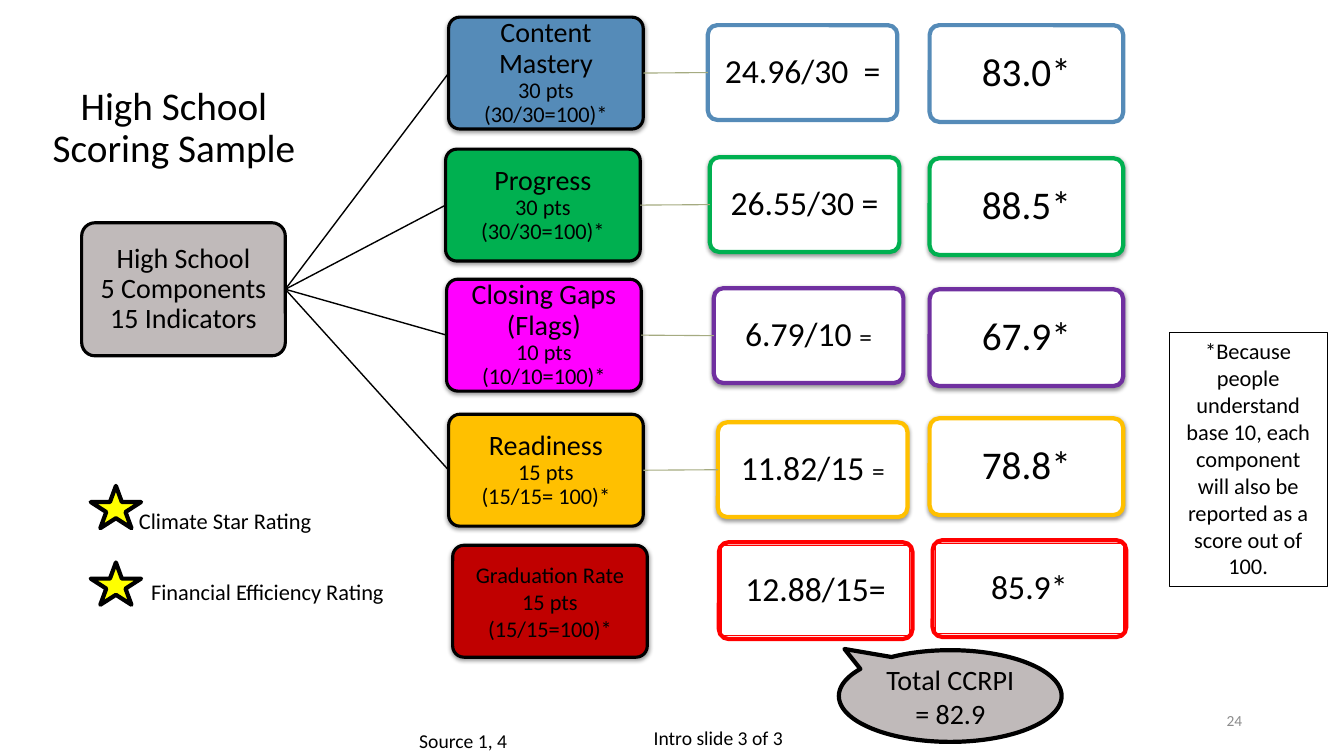
from lxml import etree
from pptx import Presentation
from pptx import util as u
from pptx.dml.color import RGBColor
from pptx.enum import shapes, text
from pptx.oxml import ns

BLACK = RGBColor(0x00, 0x00, 0x00)
WHITE = RGBColor(0xFF, 0xFF, 0xFF)
GRAY = RGBColor(0xC0, 0xBA, 0xBA)
NUMBER_GRAY = RGBColor(0x8C, 0x8C, 0x8C)
LINK = RGBColor(0xA5, 0xAB, 0x81)
BLUE = RGBColor(0x55, 0x8B, 0xB8)
GREEN = RGBColor(0x00, 0xB0, 0x50)
MAGENTA = RGBColor(0xFF, 0x00, 0xFF)
PURPLE = RGBColor(0x70, 0x30, 0xA0)
AMBER = RGBColor(0xFF, 0xC0, 0x00)
DARK_RED = RGBColor(0xC0, 0x00, 0x00)
RED = RGBColor(0xFF, 0x00, 0x00)
YELLOW = RGBColor(0xFF, 0xFF, 0x00)

CENTER, LEFT, RIGHT = text.PP_ALIGN.CENTER, text.PP_ALIGN.LEFT, text.PP_ALIGN.RIGHT
MIDDLE, TOP = text.MSO_ANCHOR.MIDDLE, text.MSO_ANCHOR.TOP
KIND = shapes.MSO_SHAPE


def write(holder, lines, align=CENTER, anchor=MIDDLE, spacing=1.0, inset=None, color=BLACK):
    """Fill a holder; each line is a list of (text, size) runs."""
    frame = holder.text_frame
    frame.word_wrap = True
    frame.vertical_anchor = anchor
    if inset is not None:
        frame.margin_left = frame.margin_right = u.Inches(inset)
        frame.margin_top = frame.margin_bottom = u.Inches(inset)
    for index, line in enumerate(lines):
        paragraph = frame.paragraphs[0] if index == 0 else frame.add_paragraph()
        paragraph.alignment = align
        paragraph.line_spacing = spacing
        for words, size in line:
            run = paragraph.add_run()
            run.text = words
            run.font.size = u.Pt(size)
            run.font.name = "Calibri"
            run.font.color.rgb = color


def draw(kind, box, fill, outline, weight, shadow=False):
    """Add a preset shape; box is left, top, width, height in inches."""
    shape = slide.shapes.add_shape(kind, *map(u.Inches, box))
    shape.shadow.inherit = False
    if fill is None:
        shape.fill.background()
    else:
        shape.fill.solid()
        shape.fill.fore_color.rgb = fill
    shape.line.color.rgb = outline
    shape.line.width = u.Pt(weight)
    if kind == KIND.ROUNDED_RECTANGLE:
        shape.adjustments[0] = 0.1
    if shadow:
        effects = shape.element.spPr.find(ns.qn("a:effectLst"))
        outer = etree.SubElement(effects, ns.qn("a:outerShdw"), blurRad=str(u.Pt(3)),
                                 dist=str(u.Pt(1.4)), dir="5400000", rotWithShape="0")
        tint = etree.SubElement(outer, ns.qn("a:srgbClr"), val="000000")
        etree.SubElement(tint, ns.qn("a:alpha"), val="40000")
    return shape


deck = Presentation()
deck.slide_width, deck.slide_height = u.Inches(13.33), u.Inches(7.5)
slide = deck.slides.add_slide(deck.slide_layouts[5])

# Title
title = slide.shapes.title
title.left, title.top, title.width, title.height = map(u.Inches, (0.39, 0.77, 2.67, 1.01))
write(title, [[("High School", 28)], [("Scoring Sample", 28)]], spacing=0.9)

# Root of the tree
school = draw(KIND.ROUNDED_RECTANGLE, (0.81, 2.21, 2.02, 1.32), GRAY, BLACK, 2.25)
write(school, [[(words, 20)] for words in ("High School", "5 Components", "15 Indicators")],
      spacing=0.9, inset=0.01)

# Components: name, size, points, share, fill, outline of results, left and top,
# then left and top of points earned and of the score out of 100
components = [
    ("Content Mastery", 20, "30 pts", "(30/30=100)*", BLUE, BLUE, (4.45, 0.17),
     [("24.96/30  =", 24)], (7.02, 0.25), "83.0*", (9.22, 0.25)),
    ("Progress", 20, "30 pts", "(30/30=100)*", GREEN, GREEN, (4.42, 1.48),
     [("26.55/30 =", 24)], (7.04, 1.56), "88.5*", (9.22, 1.57)),
    ("Closing Gaps (Flags)", 20, "10 pts", "(10/10=100)*", MAGENTA, PURPLE, (4.43, 2.77),
     [("6.79/10 ", 24), ("=", 18)], (7.08, 2.86), "67.9*", (9.22, 2.87)),
    ("Readiness", 20, "15 pts", "(15/15= 100)*", AMBER, AMBER, (4.45, 4.11),
     [("11.82/15 ", 24), ("=", 18)], (7.12, 4.19), "78.8*", (9.22, 4.15)),
    ("Graduation Rate", 16, "15 pts", "(15/15=100)*", DARK_RED, RED, (4.49, 5.41),
     [("12.88/15=", 24)], (7.13, 5.38), "85.9*", (9.25, 5.36)),
]
for (name, name_size, points, share, fill, outline, corner,
     earned, earned_corner, score, score_corner) in components:
    graduation = outline == RED
    shaded = outline in (GREEN, PURPLE, AMBER)

    component = draw(KIND.ROUNDED_RECTANGLE, (*corner, 1.93, 1.11), fill, BLACK, 2.25, shadow=True)
    write(component, [[(name, name_size)], [(points, 16)], [(share, 16)]],
          spacing=1.0 if graduation else 0.9, inset=0.01)

    earned_size = (1.92, 0.96) if graduation else (1.88, 0.94)
    results = []
    for place, size, line in ((earned_corner, earned_size, earned),
                              (score_corner, (1.92, 0.96), [(score, 24 if graduation else 28)])):
        result = draw(KIND.ROUNDED_RECTANGLE, (*place, *size), WHITE, outline, 3, shadow=shaded)
        results.append(result)
        if graduation:
            inner = (place[0] + 0.03, place[1] + 0.03, size[0] - 0.06, size[1] - 0.06)
            result = draw(KIND.RECTANGLE, inner, None, outline, 0.75)
        write(result, [line], spacing=0.9, inset=0.02)

    # Branch from the school and link to the points earned
    if not graduation:
        for start, end, color, weight in ((school, component, BLACK, 1),
                                          (component, results[0], LINK, 0.79)):
            branch = slide.shapes.add_connector(shapes.MSO_CONNECTOR.STRAIGHT, 0, 0, 0, 0)
            branch.begin_connect(start, 3)
            branch.end_connect(end, 1)
            branch.line.color.rgb = color
            branch.line.width = u.Pt(weight)
            etree.SubElement(branch.element.spPr, ns.qn("a:effectLst"))

# Total
total = draw(KIND.OVAL_CALLOUT, (8.32, 6.45, 2.21, 0.91), GRAY, BLACK, 3)
total.adjustments[0], total.adjustments[1] = -0.475, -0.513
write(total, [[("Total CCRPI = 82.9", 20)]])

# Star ratings
for star_top in (4.82, 5.58):
    draw(KIND.STAR_5_POINT, (0.9, star_top, 0.5, 0.42), YELLOW, BLACK, 3)

# Explanation of the asterisk
note = draw(KIND.RECTANGLE, (11.6, 3.3, 1.56, 2.52), None, BLACK, 0.25)
write(note, [[("*Because people understand base 10, each component will also be "
               "reported as a score out of 100.", 16)]], anchor=TOP)

# Rating labels, footer and slide number
labels = [
    ("Climate Star Rating", 16, (1.28, 4.98, 2.28, 0.37), LEFT, TOP, BLACK),
    ("Financial Efficiency Rating", 16, (1.4, 5.69, 2.54, 0.37), LEFT, TOP, BLACK),
    ("Source 1, 4", 14, (4.06, 7.18, 1.56, 0.34), LEFT, TOP, BLACK),
    ("Intro slide 3 of 3", 14, (6.36, 7.15, 1.53, 0.34), CENTER, TOP, BLACK),
    ("24", 11, (9.42, 6.95, 3, 0.4), RIGHT, MIDDLE, NUMBER_GRAY),
]
for words, size, box, align, anchor, color in labels:
    label = slide.shapes.add_textbox(*map(u.Inches, box))
    write(label, [[(words, size)]], align=align, anchor=anchor, color=color)

deck.save("out.pptx")
